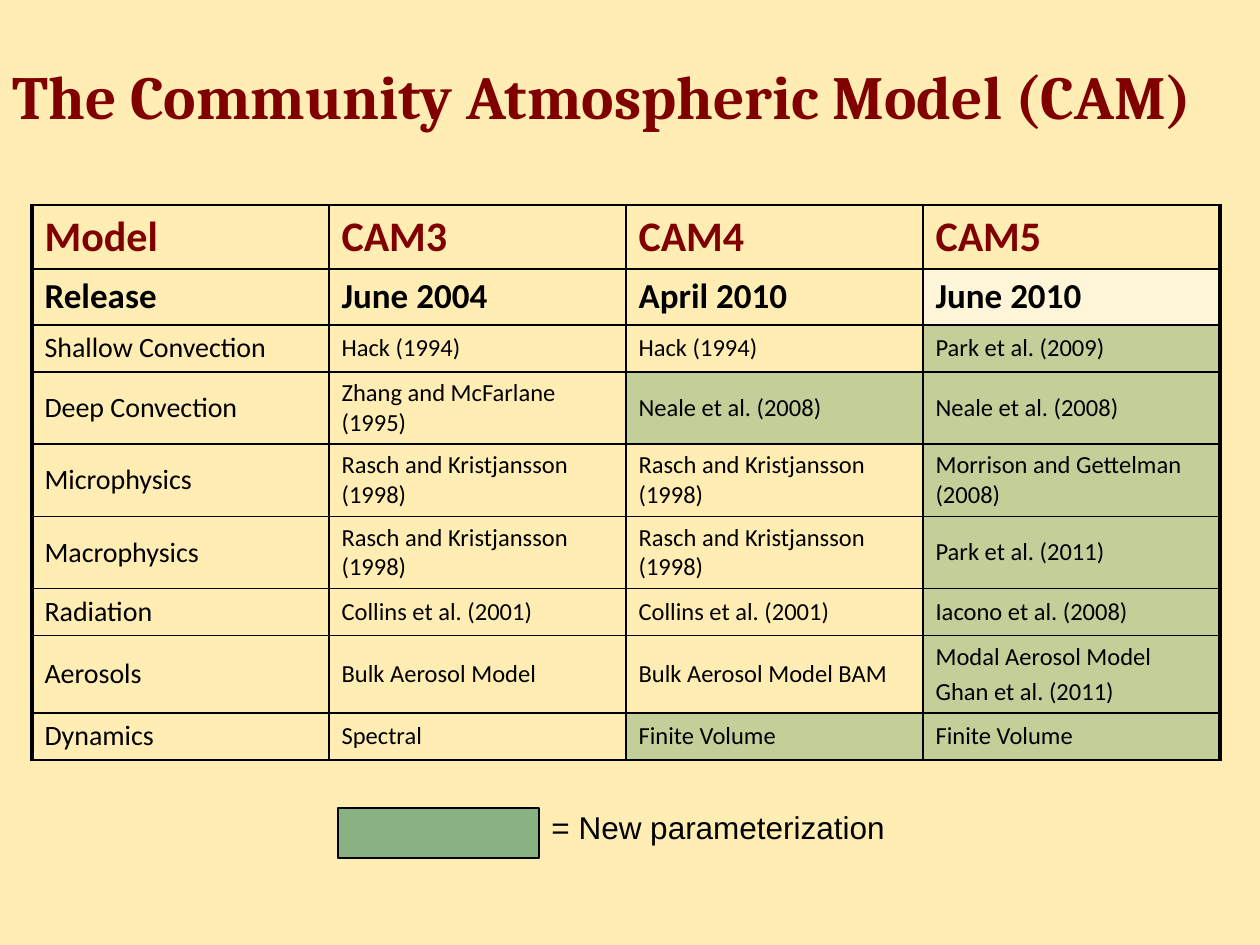
from dataclasses import dataclass
from lxml.etree import SubElement
from pptx import Presentation
from pptx.dml.color import RGBColor
from pptx.enum.shapes import MSO_SHAPE
from pptx.enum.text import MSO_ANCHOR, PP_ALIGN
from pptx.oxml.ns import qn
from pptx.util import Emu, Pt


@dataclass(frozen=True)
class Theme:
    back: str = "FFEDB3"
    head: str = "800000"
    ink: str = "000000"
    new: str = "88B281"
    pale: str = "FFFFFF"
    serif: str = "Cambria"
    body: str = "Calibri"
    sans: str = "Arial"
    title: int = 35
    top: int = 24
    date: int = 20
    label: int = 16
    cell: int = 14
    note: int = 18
    thin: float = 1
    thick: float = 2.25


@dataclass(frozen=True)
class Row:
    high: int
    texts: tuple[str, str, str, str]
    new: int = 1


THEME = Theme()
WIDE = 297
LEFT, TOP = 32, 205
RASCH = "Rasch and Kristjansson (1998)"
ROWS = [
    Row(63, ("Model", "CAM3", "CAM4", "CAM5"), 0),
    Row(56, ("Release", "June 2004", "April 2010", "June 2010"), 0),
    Row(47, ("Shallow Convection", "Hack (1994)", "Hack (1994)", "Park et al. (2009)")),
    Row(72, ("Deep Convection", "Zhang and McFarlane (1995)",
             "Neale et al. (2008)", "Neale et al. (2008)"), 2),
    Row(72, ("Microphysics", RASCH, RASCH, "Morrison and Gettelman (2008)")),
    Row(72, ("Macrophysics", RASCH, RASCH, "Park et al. (2011)")),
    Row(47, ("Radiation", "Collins et al. (2001)", "Collins et al. (2001)",
             "Iacono et al. (2008)")),
    Row(77, ("Aerosols", "Bulk Aerosol Model", "Bulk Aerosol Model BAM",
             "Modal Aerosol Model\nGhan et al. (2011)")),
    Row(47, ("Dynamics", "Spectral", "Finite Volume", "Finite Volume"), 2),
]


def px(size: int) -> Emu:
    return Emu(round(size * 914400 / 126))


def box(left: int, top: int, wide: int, high: int) -> tuple[Emu, ...]:
    return tuple(px(size) for size in (left, top, wide, high))


def style(para, face: str, size: int, color: str, bold: bool = False) -> None:
    para.alignment = PP_ALIGN.LEFT
    font = para.font
    font.name, font.size, font.bold = face, Pt(size), bold
    font.color.rgb = RGBColor.from_string(color)


def edge(cell, side: str, width: float) -> None:
    line = SubElement(cell._tc.get_or_add_tcPr(), qn(f"a:ln{side}"), w=str(Pt(width)))
    fill = SubElement(line, qn("a:solidFill"))
    SubElement(fill, qn("a:srgbClr"), val=THEME.ink)


def tint(cell, color: str) -> None:
    cell.fill.solid()
    cell.fill.fore_color.rgb = RGBColor.from_string(color)
    tone = cell._tc.tcPr.find(f"{qn('a:solidFill')}/{qn('a:srgbClr')}")
    SubElement(tone, qn("a:alpha"), val="50000")


def draw_cell(cell, row: int, col: int) -> None:
    last = len(ROWS[row].texts) - 1
    edge(cell, "L", THEME.thick if col == 0 else THEME.thin)
    edge(cell, "R", THEME.thick if col == last else THEME.thin)
    edge(cell, "T", THEME.thin)
    edge(cell, "B", THEME.thin)
    if col > last - ROWS[row].new:
        tint(cell, THEME.new)
    elif (row, col) == (1, last):
        tint(cell, THEME.pale)
    else:
        cell.fill.background()
    cell.vertical_anchor = MSO_ANCHOR.MIDDLE
    cell.text = ROWS[row].texts[col]
    body = THEME.label if col == 0 else THEME.cell
    size = (THEME.top, THEME.date)[row] if row < 2 else body
    color = THEME.head if row == 0 else THEME.ink
    for spot, para in enumerate(cell.text_frame.paragraphs):
        style(para, THEME.body, size, color, row < 2)
        if spot:
            para.space_before = Pt(size * 0.2)


def draw_table(slide) -> None:
    cols = len(ROWS[0].texts)
    high = sum(row.high for row in ROWS)
    place = box(LEFT, TOP, WIDE * cols, high)
    table = slide.shapes.add_table(len(ROWS), cols, *place).table
    table.first_row = table.horz_banding = False
    for col in table.columns:
        col.width = px(WIDE)
    for spot, row in enumerate(ROWS):
        table.rows[spot].height = px(row.high)
        for col in range(cols):
            draw_cell(table.cell(spot, col), spot, col)


def draw_title(slide) -> None:
    title = slide.shapes.title
    title.left, title.top, title.width, title.height = box(0, 32, 1260, 127)
    title.text = "The Community Atmospheric Model (CAM)"
    title.text_frame.vertical_anchor = MSO_ANCHOR.MIDDLE
    style(title.text_frame.paragraphs[0], THEME.serif, THEME.title, THEME.head, True)


def draw_key(slide) -> None:
    group = slide.shapes.add_group_shape()
    swatch = group.shapes.add_shape(MSO_SHAPE.RECTANGLE, *box(338, 808, 201, 50))
    swatch.shadow.inherit = False
    swatch.fill.solid()
    swatch.fill.fore_color.rgb = RGBColor.from_string(THEME.new)
    swatch.line.color.rgb = RGBColor.from_string(THEME.ink)
    swatch.line.width = Pt(0.75)
    note = group.shapes.add_textbox(*box(539, 806, 496, 52)).text_frame
    note.word_wrap = True
    note.text = "= New parameterization"
    note.paragraphs[0].line_spacing = 0.9
    style(note.paragraphs[0], THEME.sans, THEME.note, THEME.ink)


def main() -> None:
    deck = Presentation()
    deck.slide_width, deck.slide_height = px(1260), px(945)
    slide = deck.slides.add_slide(deck.slide_layouts[5])
    slide.background.fill.solid()
    slide.background.fill.fore_color.rgb = RGBColor.from_string(THEME.back)
    draw_title(slide)
    draw_table(slide)
    draw_key(slide)
    deck.save("out.pptx")


if __name__ == "__main__":
    main()
